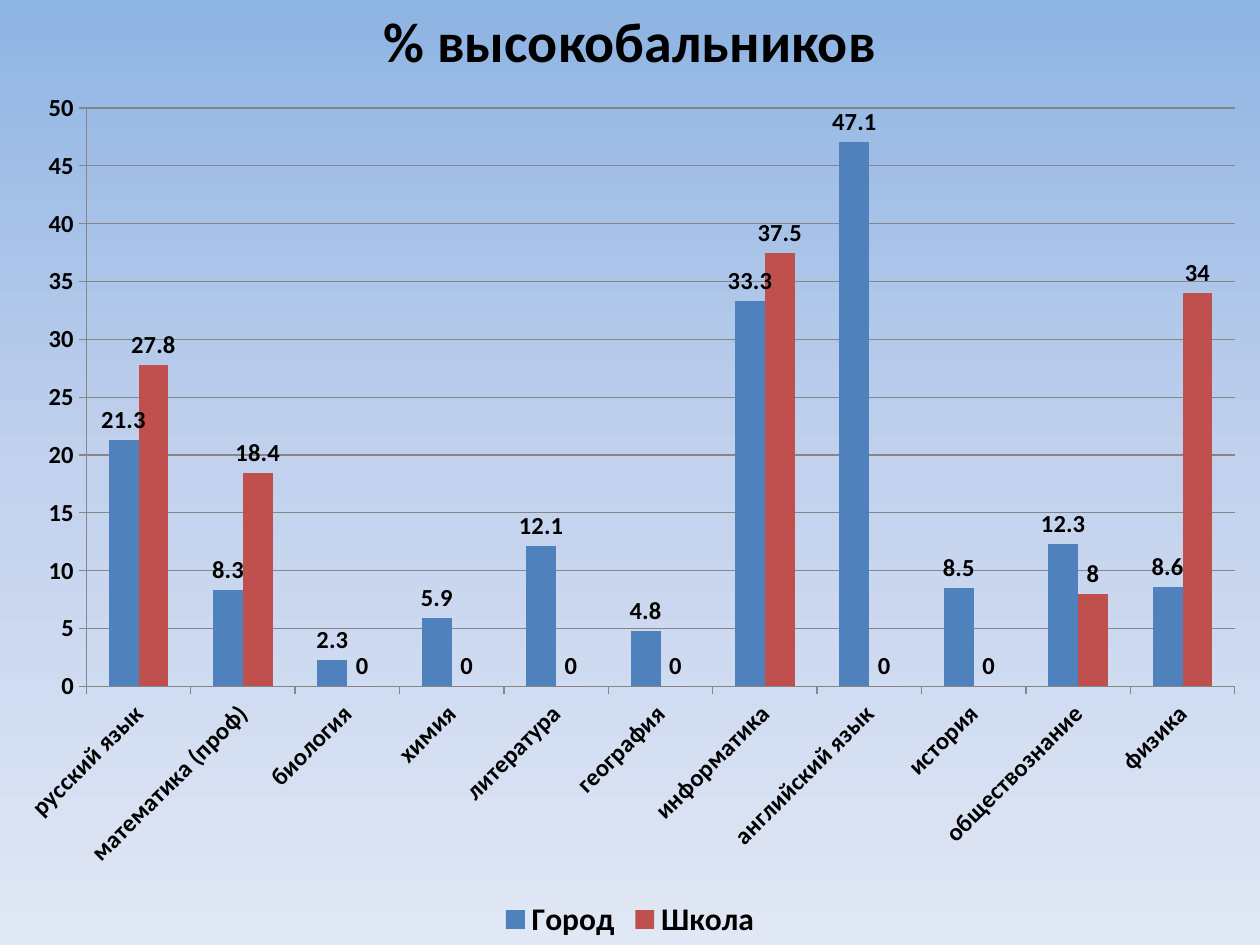
from copy import deepcopy

from pptx import Presentation
from pptx.chart.data import CategoryChartData
from pptx.dml.color import RGBColor
from pptx.enum.chart import (XL_CHART_TYPE, XL_LABEL_POSITION,
                             XL_LEGEND_POSITION, XL_TICK_MARK)
from pptx.enum.text import MSO_ANCHOR, MSO_AUTO_SIZE, PP_ALIGN
from pptx.oxml.ns import qn
from pptx.util import Inches, Pt

COLUMNS = XL_CHART_TYPE.COLUMN_CLUSTERED
LABEL_ABOVE = XL_LABEL_POSITION.OUTSIDE_END
LEGEND_BOTTOM = XL_LEGEND_POSITION.BOTTOM
TICK_OUTSIDE = XL_TICK_MARK.OUTSIDE

FONT = "Calibri"
BLACK = RGBColor(0x00, 0x00, 0x00)
AXIS_GREY = RGBColor(0x86, 0x86, 0x86)
CITY_BLUE = RGBColor(0x4F, 0x81, 0xBD)
SCHOOL_RED = RGBColor(0xC0, 0x50, 0x4D)
SKY = [
    (0, RGBColor(0x8E, 0xB4, 0xE3)),
    (0.5, RGBColor(0xC2, 0xD1, 0xED)),
    (1, RGBColor(0xE1, 0xE8, 0xF5)),
]

SUBJECTS = ["русский язык", "математика (проф)", "биология", "химия",
            "литература", "география", "информатика", "английский язык",
            "история", "обществознание", "физика"]
RESULTS = [
    ("Город", CITY_BLUE,
     [21.3, 8.3, 2.3, 5.9, 12.1, 4.8, 33.3, 47.1, 8.5, 12.3, 8.6]),
    ("Школа", SCHOOL_RED,
     [27.8, 18.4, 0, 0, 0, 0, 37.5, 0, 0, 8, 34]),
]


def set_attributes(target, values):
    for name, value in values.items():
        setattr(target, name, value)


def format_font(font, size, bold=True):
    set_attributes(font, {"name": FONT, "size": Pt(size), "bold": bold})
    font.color.rgb = BLACK


def paint_background(slide):
    fill = slide.background.fill
    fill.gradient()
    fill.gradient_angle = 270
    # A new gradient has two stops; add the middle one
    stop_list = slide.element.find(".//" + qn("a:gsLst"))
    stop_list.append(deepcopy(stop_list[0]))
    for stop, (position, color) in zip(fill.gradient_stops, SKY):
        stop.position = position
        stop.color.rgb = color


def add_title(slide, text):
    title = slide.shapes.title
    set_attributes(title, {"left": Inches(0), "top": Inches(0),
                           "width": Inches(10), "height": Inches(0.64)})
    frame = title.text_frame
    frame.text = text
    set_attributes(frame, {"word_wrap": True,
                           "vertical_anchor": MSO_ANCHOR.TOP,
                           "auto_size": MSO_AUTO_SIZE.SHAPE_TO_FIT_TEXT})
    heading = frame.paragraphs[0]
    heading.alignment = PP_ALIGN.CENTER
    format_font(heading.runs[0].font, 32)


def format_axis(axis):
    axis.major_tick_mark = TICK_OUTSIDE
    axis.format.line.color.rgb = AXIS_GREY
    format_font(axis.tick_labels.font, 14)


def format_series(series, color):
    series.format.fill.solid()
    series.format.fill.fore_color.rgb = color
    series.invert_if_negative = False
    labels = series.data_labels
    set_attributes(labels, {"show_value": True, "position": LABEL_ABOVE})
    format_font(labels.font, 14)


def add_results_chart(slide):
    data = CategoryChartData()
    data.categories = SUBJECTS
    for name, _, values in RESULTS:
        data.add_series(name, values)
    chart = slide.shapes.add_chart(COLUMNS, Inches(0), Inches(0.6),
                                   Inches(10), Inches(6.9), data).chart
    format_font(chart.font, 10, bold=False)
    set_attributes(chart, {"has_title": False, "has_legend": True})

    # Columns
    plot = chart.plots[0]
    set_attributes(plot, {"gap_width": 150, "overlap": 0,
                          "vary_by_categories": False})
    for series, (_, color, _) in zip(plot.series, RESULTS):
        format_series(series, color)

    # Axes, with slanted subject names
    subject_axis, percent_axis = chart.category_axis, chart.value_axis
    for axis in (subject_axis, percent_axis):
        format_axis(axis)
    subject_text = subject_axis._element.find(qn("c:txPr"))
    subject_text.find(qn("a:bodyPr")).set("rot", "-2700000")
    set_attributes(percent_axis, {"minimum_scale": 0, "maximum_scale": 50,
                                  "major_unit": 5,
                                  "has_major_gridlines": True})
    percent_axis.major_gridlines.format.line.color.rgb = AXIS_GREY

    # Legend
    set_attributes(chart.legend, {"position": LEGEND_BOTTOM,
                                  "include_in_layout": False})
    format_font(chart.legend.font, 18)


def main():
    deck = Presentation()
    set_attributes(deck, {"slide_width": Inches(10),
                          "slide_height": Inches(7.5)})
    title_only = deck.slide_layouts[5]
    slide = deck.slides.add_slide(title_only)
    paint_background(slide)
    add_title(slide, "% высокобальников")
    add_results_chart(slide)
    deck.save("out.pptx")


if __name__ == "__main__":
    main()
